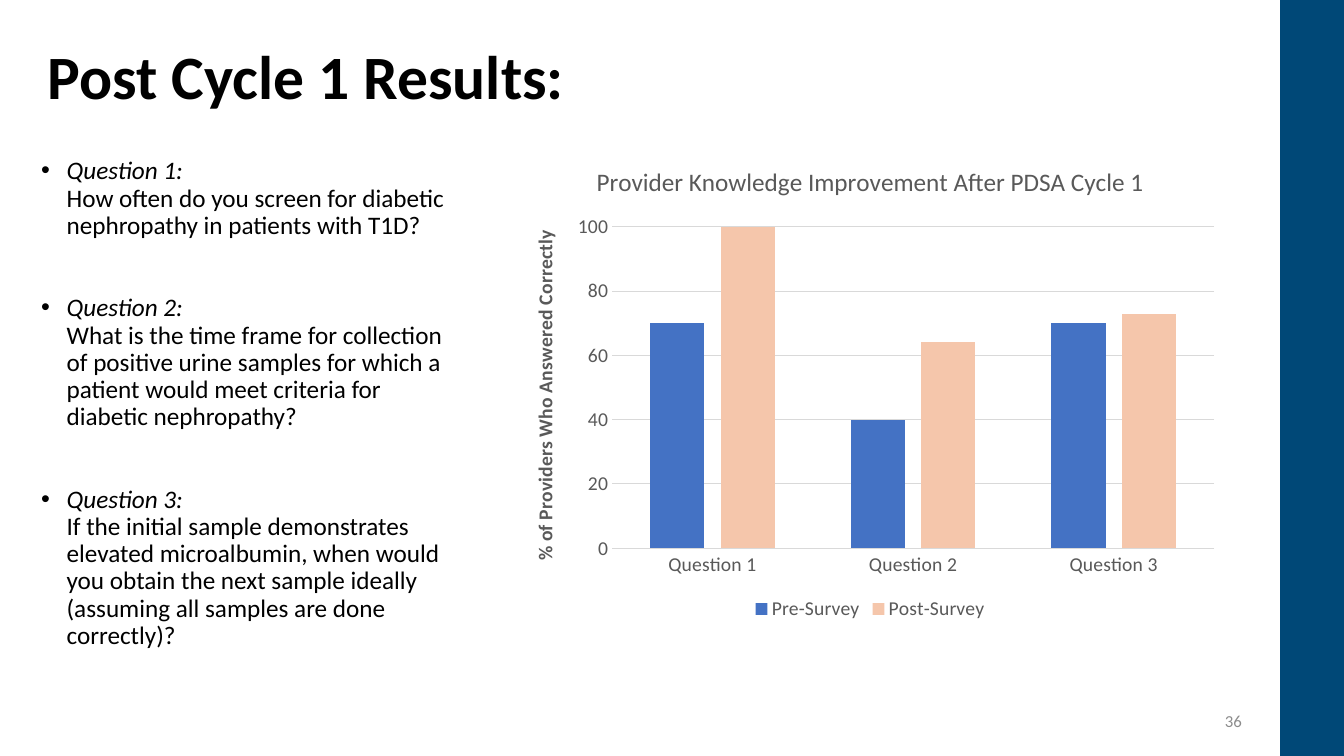
from dataclasses import dataclass

import pptx
import pptx.chart.data
import pptx.dml.color
import pptx.enum.chart
import pptx.enum.shapes
import pptx.enum.text
import pptx.oxml
import pptx.oxml.ns
import pptx.util
from lxml import etree
from pptx.util import Cm


@dataclass(frozen=True)
class Theme:
    font: str = "Calibri"
    black: str = "000000"
    band: str = "004877"
    chart_text: str = "595959"
    grid: str = "D9D9D9"
    page_number: str = "8C8C8C"
    pre_survey: str = "4472C4"
    post_survey: str = "F5C6AB"
    title_size: int = 44
    body_size: int = 18
    axis_size: int = 14
    small_size: int = 12


def rgb(color):
    return pptx.dml.color.RGBColor.from_string(color)


class SlideBuilder:
    def __init__(self, slide, theme):
        self.slide = slide
        self.theme = theme

    def style(self, font, size, color, bold=False, italic=False):
        font.name = self.theme.font
        font.size = pptx.util.Pt(size)
        font.color.rgb = rgb(color)
        font.bold = bold
        font.italic = italic

    def add_run(self, paragraph, text, size, color, **emphasis):
        run = paragraph.add_run()
        run.text = text
        self.style(run.font, size, color, **emphasis)

    def add_band(self, left, top, width, height):
        shape = self.slide.shapes.add_shape(
            pptx.enum.shapes.MSO_SHAPE.RECTANGLE, left, top, width, height)
        shape.shadow.inherit = False
        shape.fill.solid()
        shape.fill.fore_color.rgb = rgb(self.theme.band)
        shape.line.fill.background()

    def add_title(self, text, left, top, width, height):
        title = self.slide.shapes.title
        title.left, title.top, title.width, title.height = left, top, width, height
        frame = title.text_frame
        frame.word_wrap = True
        frame.vertical_anchor = pptx.enum.text.MSO_ANCHOR.MIDDLE
        paragraph = frame.paragraphs[0]
        paragraph.alignment = pptx.enum.text.PP_ALIGN.LEFT
        paragraph.line_spacing = 0.9
        self.add_run(paragraph, text, self.theme.title_size, self.theme.black, bold=True)

    def add_text_box(self, left, top, width, height):
        frame = self.slide.shapes.add_textbox(left, top, width, height).text_frame
        frame.word_wrap = True
        return frame

    def add_questions(self, questions, left, top, width, height):
        frame = self.add_text_box(left, top, width, height)
        size, color = self.theme.body_size, self.theme.black
        for index, (heading, question) in enumerate(questions):
            paragraph = frame.add_paragraph() if index else frame.paragraphs[0]
            properties = paragraph._p.get_or_add_pPr()
            properties.set("marL", str(Cm(0.64)))
            properties.set("indent", str(-Cm(0.64)))
            bullet_font = etree.SubElement(properties, pptx.oxml.ns.qn("a:buFont"))
            bullet_font.set("typeface", "Arial")
            bullet = etree.SubElement(properties, pptx.oxml.ns.qn("a:buChar"))
            bullet.set("char", "•")
            paragraph.line_spacing = 0.9
            if index:
                paragraph.space_before = pptx.util.Pt(39.5)
            self.add_run(paragraph, heading, size, color, italic=True)
            paragraph.add_line_break()
            self.add_run(paragraph, question, size, color)

    def add_page_number(self, text, left, top, width, height):
        frame = self.add_text_box(left, top, width, height)
        frame.vertical_anchor = pptx.enum.text.MSO_ANCHOR.MIDDLE
        paragraph = frame.paragraphs[0]
        paragraph.alignment = pptx.enum.text.PP_ALIGN.RIGHT
        self.add_run(paragraph, text, self.theme.small_size, self.theme.page_number)

    def add_column_chart(self, title, axis_title, categories, series, left, top, width, height):
        theme = self.theme
        data = pptx.chart.data.CategoryChartData()
        data.categories = categories
        for name, values, _ in series:
            data.add_series(name, values)
        chart = self.slide.shapes.add_chart(
            pptx.enum.chart.XL_CHART_TYPE.COLUMN_CLUSTERED,
            left, top, width, height, data).chart
        self.style(chart.font, theme.axis_size, theme.chart_text)

        # Titles and legend
        chart.has_title = True
        self.add_run(chart.chart_title.text_frame.paragraphs[0], title,
                     theme.body_size, theme.chart_text)
        chart.chart_title.include_in_layout = False
        chart.has_legend = True
        chart.legend.position = pptx.enum.chart.XL_LEGEND_POSITION.BOTTOM
        chart.legend.include_in_layout = False
        self.style(chart.legend.font, theme.axis_size, theme.chart_text)

        # Axes
        for axis in (chart.category_axis, chart.value_axis):
            axis.major_tick_mark = pptx.enum.chart.XL_TICK_MARK.NONE
            axis.minor_tick_mark = pptx.enum.chart.XL_TICK_MARK.NONE
            self.style(axis.tick_labels.font, theme.axis_size, theme.chart_text)
        value_axis = chart.value_axis
        value_axis.minimum_scale, value_axis.maximum_scale = 0, 100
        value_axis.major_unit = 20
        value_axis.has_major_gridlines = True
        value_axis.format.line.fill.background()
        for line in (chart.category_axis.format.line, value_axis.major_gridlines.format.line):
            line.color.rgb = rgb(theme.grid)
            line.width = pptx.util.Pt(0.75)
        self.add_run(value_axis.axis_title.text_frame.paragraphs[0], axis_title,
                     theme.axis_size, theme.chart_text, bold=True)

        # Columns
        plot = chart.plots[0]
        plot.vary_by_categories = False
        plot.gap_width = 140
        plot.overlap = -30
        for column, (_, _, color) in zip(plot.series, series):
            column.format.fill.solid()
            column.format.fill.fore_color.rgb = rgb(color)
        self.place_plot(chart, x=0.14, y=0.17, w=0.84, h=0.67)

    def place_plot(self, chart, **fractions):
        qn = pptx.oxml.ns.qn
        plot_area = chart._chartSpace.find(".//" + qn("c:plotArea"))
        layout = plot_area.find(qn("c:layout"))
        if layout is None:
            layout = etree.Element(qn("c:layout"))
            plot_area.insert(0, layout)
        manual = etree.SubElement(layout, qn("c:manualLayout"))
        settings = {"layoutTarget": "inner", "xMode": "edge", "yMode": "edge", **fractions}
        for name, value in settings.items():
            etree.SubElement(manual, qn("c:" + name)).set("val", str(value))


def main():
    theme = Theme()
    presentation = pptx.Presentation()
    presentation.slide_width, presentation.slide_height = Cm(33.87), Cm(19.05)
    slide = presentation.slides.add_slide(presentation.slide_layouts[5])
    builder = SlideBuilder(slide, theme)

    # Side band and title
    builder.add_band(Cm(32.26), Cm(0), Cm(1.61), Cm(19.05))
    builder.add_title("Post Cycle 1 Results:", Cm(0.95), Cm(0.75), Cm(28.8), Cm(2.5))

    # Survey questions
    questions = [
        ("Question 1:",
         "How often do you screen for diabetic nephropathy in patients with T1D?"),
        ("Question 2:",
         "What is the time frame for collection of positive urine samples for which a "
         "patient would meet criteria for diabetic nephropathy?"),
        ("Question 3:",
         "If the initial sample demonstrates elevated microalbumin, when would "
         "you obtain the next sample ideally (assuming all samples are done correctly)?"),
    ]
    builder.add_questions(questions, Cm(0.79), Cm(3.86), Cm(10.92), Cm(12.09))

    # Survey results
    series = [
        ("Pre-Survey", (70, 40, 70), theme.pre_survey),
        ("Post-Survey", (100, 64, 73), theme.post_survey),
    ]
    builder.add_column_chart(
        "Provider Knowledge Improvement After PDSA Cycle 1",
        "% of Providers Who Answered Correctly",
        [heading.rstrip(":") for heading, _ in questions], series,
        Cm(12.9), Cm(3.66), Cm(18.06), Cm(12.09))

    # Page number
    builder.add_page_number("36", Cm(23.93), Cm(17.65), Cm(7.62), Cm(1.02))
    presentation.save("out.pptx")


if __name__ == "__main__":
    main()
